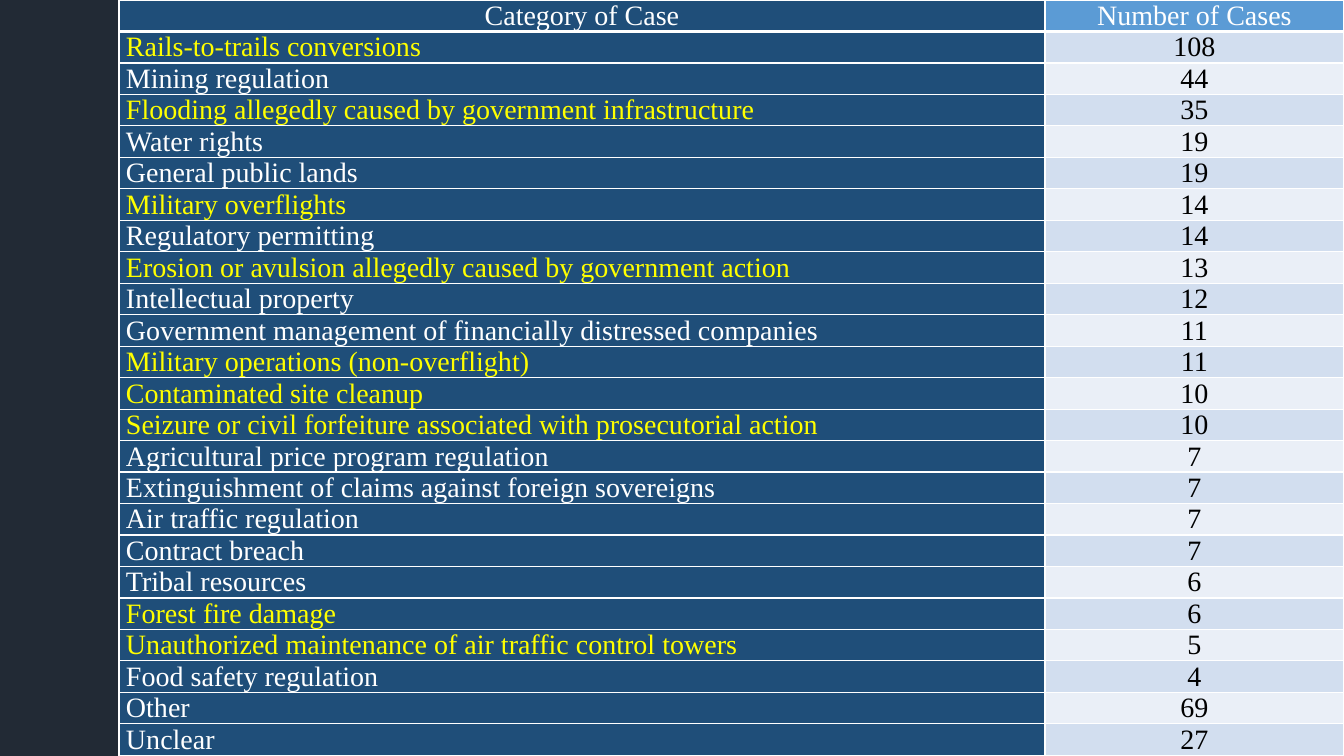
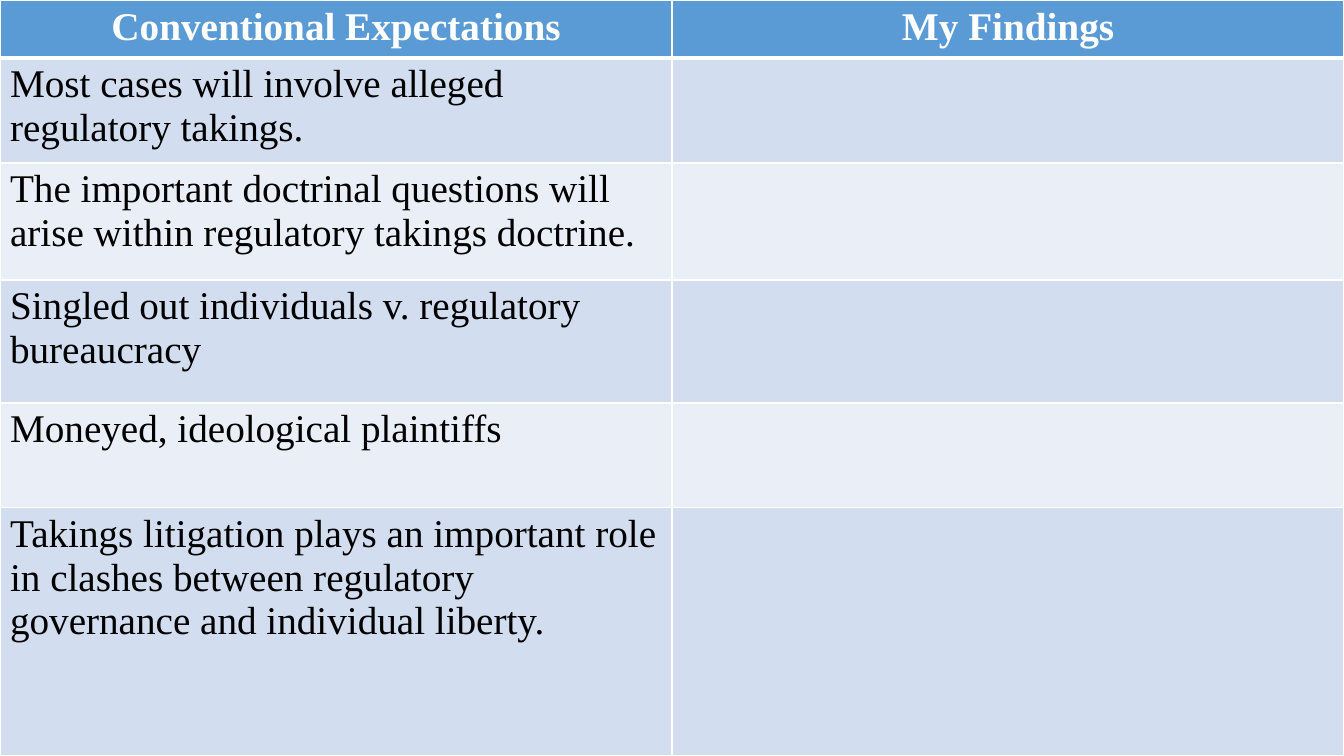
"""Build two slides of tables about takings cases and their findings."""
from lxml.etree import SubElement
from pptx import Presentation
from pptx.dml.color import RGBColor
from pptx.enum.text import MSO_ANCHOR as ANCHOR, PP_ALIGN as ALIGN
from pptx.oxml.ns import qn
from pptx.util import Emu, Pt

PX = 914400 / 100.8
WIDTH, HEIGHT = 1344, 756
FONT = "Times New Roman"
BACKGROUND, NAVY, BLUE = "222A35", "1F4E79", "5B9BD5"
BANDS = ("D2DEEF", "EAEFF7")
WHITE, BLACK, YELLOW = "FFFFFF", "000000", "FFFF00"

CASE_HEADER = ("Category of Case", "Number of Cases")
CASES = [
    ("Rails-to-trails conversions", 108, YELLOW),
    ("Mining regulation", 44, WHITE),
    ("Flooding allegedly caused by government infrastructure", 35, YELLOW),
    ("Water rights", 19, WHITE),
    ("General public lands", 19, WHITE),
    ("Military overflights", 14, YELLOW),
    ("Regulatory permitting", 14, WHITE),
    ("Erosion or avulsion allegedly caused by government action", 13, YELLOW),
    ("Intellectual property", 12, WHITE),
    ("Government management of financially distressed companies", 11, WHITE),
    ("Military operations (non-overflight)", 11, YELLOW),
    ("Contaminated site cleanup", 10, YELLOW),
    ("Seizure or civil forfeiture associated with prosecutorial action", 10, YELLOW),
    ("Agricultural price program regulation", 7, WHITE),
    ("Extinguishment of claims against foreign sovereigns", 7, WHITE),
    ("Air traffic regulation", 7, WHITE),
    ("Contract breach", 7, WHITE),
    ("Tribal resources", 6, WHITE),
    ("Forest fire damage", 6, YELLOW),
    ("Unauthorized maintenance of air traffic control towers", 5, YELLOW),
    ("Food safety regulation", 4, WHITE),
    ("Other", 69, WHITE),
    ("Unclear", 27, WHITE),
]
CASE_COLS = (926, 299)

FINDING_HEADER = ("Conventional Expectations", "My Findings")
EXPECTATIONS = [
    ("Most cases will involve alleged regulatory takings.", 105),
    ("The important doctrinal questions will arise within regulatory takings doctrine.", 117),
    ("Singled out individuals v. regulatory bureaucracy", 123),
    ("Moneyed, ideological plaintiffs", 105),
    ("Takings litigation plays an important role in clashes between regulatory "
     "governance and individual liberty.", 248),
]
FINDING_HEADER_HEIGHT = 58


def px(n):
    return Emu(round(n * PX))


def rgb(code):
    return RGBColor.from_string(code)


def set_all(obj, values):
    for name, value in values.items():
        setattr(obj, name, value)


def add_slide(prs):
    s = prs.slides.add_slide(prs.slide_layouts[6])
    fill = s.background.fill
    fill.solid()
    fill.fore_color.rgb = rgb(BACKGROUND)
    return s


def add_borders(cell, row):
    heavy = {"T": row == 1, "B": row == 0}
    tcPr = cell._tc.get_or_add_tcPr()
    for side in "LRTB":
        width = Pt(3 if heavy.get(side) else 1)
        ln = SubElement(tcPr, qn(f"a:ln{side}"), w=str(width))
        SubElement(SubElement(ln, qn("a:solidFill")), qn("a:srgbClr"), val=WHITE)


def add_grid(s, left, cols, heights):
    total = sum(heights)
    table = s.shapes.add_table(len(heights), len(cols), px(left), 0,
                               px(sum(cols)), px(total)).table
    set_all(table, {"first_row": False, "horz_banding": False})
    for col, width in zip(table.columns, cols):
        col.width = px(width)
    for row, height in zip(table.rows, heights):
        row.height = px(height)
    return table


def fill_cell(table, row, col, text, fill, color, font, para, frame):
    cell = table.cell(row, col)
    add_borders(cell, row)
    cell.fill.solid()
    cell.fill.fore_color.rgb = rgb(fill)
    set_all(cell, frame)
    p = cell.text_frame.paragraphs[0]
    set_all(p, para)
    if text:
        r = p.add_run()
        r.text = text
        set_all(r.font, {"name": FONT, **font})
        r.font.color.rgb = rgb(color)


def add_cases(prs):
    rows = len(CASES) + 1
    table = add_grid(add_slide(prs), WIDTH - sum(CASE_COLS), CASE_COLS,
                     [HEIGHT / rows] * rows)
    frame = {"vertical_anchor": ANCHOR.BOTTOM, "margin_left": px(7),
             "margin_right": px(7), "margin_top": 0, "margin_bottom": 0}
    font = {"size": Pt(20), "bold": False}
    center = {"alignment": ALIGN.CENTER, "line_spacing": Pt(13)}
    justify = {**center, "alignment": ALIGN.JUSTIFY}
    for col, (text, fill) in enumerate(zip(CASE_HEADER, (NAVY, BLUE))):
        fill_cell(table, 0, col, text, fill, WHITE, font, center, frame)
    for i, (category, count, color) in enumerate(CASES):
        fill_cell(table, i + 1, 0, category, NAVY, color, font, justify, frame)
        fill_cell(table, i + 1, 1, str(count), BANDS[i % 2], BLACK, font, center, frame)


def add_findings(prs):
    heights = [FINDING_HEADER_HEIGHT] + [height for _, height in EXPECTATIONS]
    table = add_grid(add_slide(prs), 0, [WIDTH // 2] * 2, heights)
    for col, text in enumerate(FINDING_HEADER):
        fill_cell(table, 0, col, text, BLUE, WHITE, {"size": Pt(28), "bold": True},
                  {"alignment": ALIGN.CENTER}, {})
    for i, (expectation, _) in enumerate(EXPECTATIONS):
        for col, text in enumerate((expectation, "")):
            fill_cell(table, i + 1, col, text, BANDS[i % 2], BLACK,
                      {"size": Pt(28), "bold": False}, {}, {})


def main():
    prs = Presentation()
    set_all(prs, {"slide_width": px(WIDTH), "slide_height": px(HEIGHT)})
    add_cases(prs)
    add_findings(prs)
    prs.save("out.pptx")


if __name__ == "__main__":
    main()
